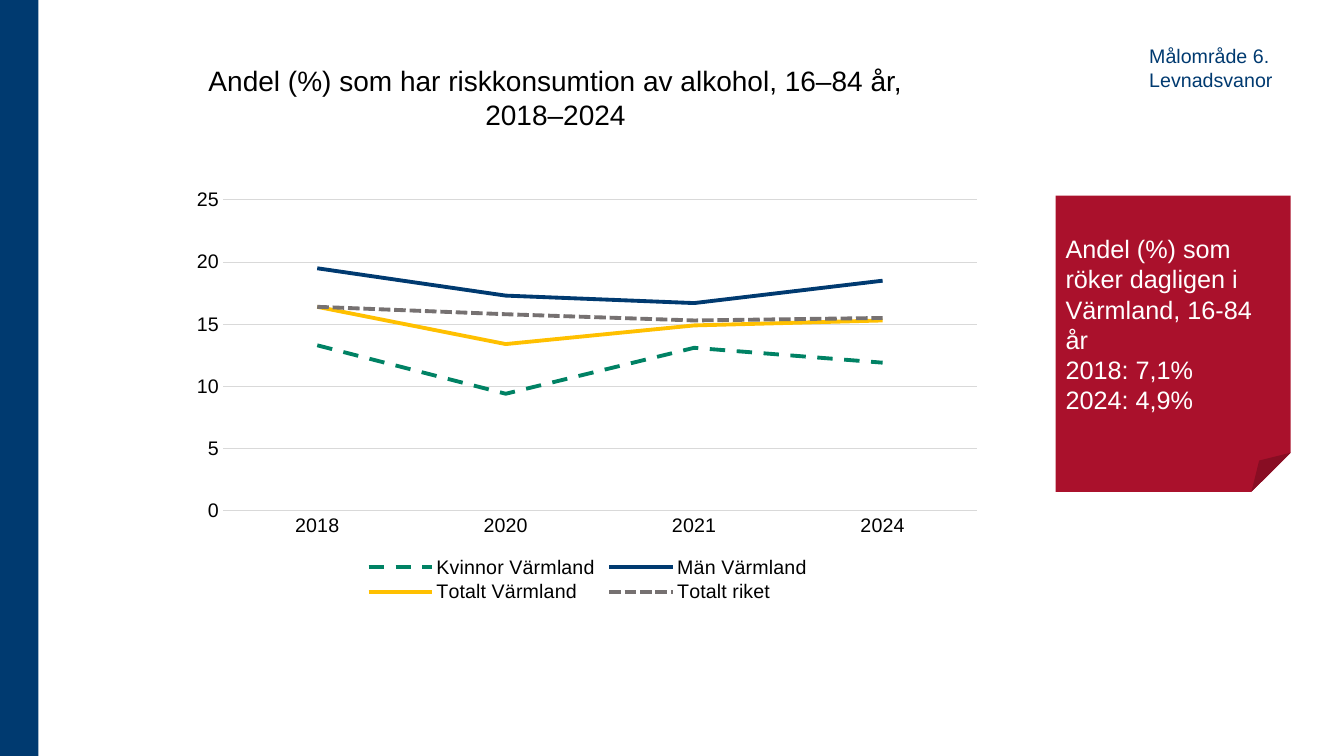
"""Builds a slide on risk consumption of alcohol in Värmland, 2018–2024."""
import pptx
import pptx.chart.data
import pptx.dml.color
import pptx.enum.chart
import pptx.enum.dml
import pptx.enum.shapes
import pptx.enum.text
import pptx.oxml
import pptx.util
from pptx.util import Inches

FONT = "Arial"
COLORS = {
    "navy": "003A70", "green": "008264", "yellow": "FFC000", "gray": "767171",
    "red": "AA112C", "grid": "D9D9D9", "black": "000000", "white": "FFFFFF",
}
DASH = pptx.enum.dml.MSO_LINE.DASH
SQUARE_DASH = pptx.enum.dml.MSO_LINE.SQUARE_DOT
YEARS = ["2018", "2020", "2021", "2024"]
SERIES = [
    ("Kvinnor Värmland", (13.3, 9.4, 13.1, 11.9), "green", DASH),
    ("Män Värmland", (19.5, 17.3, 16.7, 18.5), "navy", None),
    ("Totalt Värmland", (16.4, 13.4, 14.9, 15.3), "yellow", None),
    ("Totalt riket", (16.4, 15.8, 15.3, 15.5), "gray", SQUARE_DASH),
]


def color(name):
    """Return the named colour."""
    return pptx.dml.color.RGBColor.from_string(COLORS[name])


def set_font(font, size, name):
    """Set typeface, size and colour."""
    font.name = FONT
    font.size = pptx.util.Pt(size)
    font.color.rgb = color(name)


def set_line(line, name, width):
    """Set line colour and width."""
    line.color.rgb = color(name)
    line.width = pptx.util.Pt(width)


def write(box, lines, size, name):
    """Write one paragraph per line into a shape, aligned left."""
    frame = box.text_frame
    frame.word_wrap = True
    frame.text = "\n".join(lines)
    for para in frame.paragraphs:
        para.alignment = pptx.enum.text.PP_ALIGN.LEFT
        set_font(para.font, size, name)
    return frame


def add_block(page, kind, place, fill):
    """Add a filled shape without outline or shadow."""
    block = page.shapes.add_shape(kind, *map(Inches, place))
    block.shadow.inherit = False
    block.fill.solid()
    block.fill.fore_color.rgb = color(fill)
    block.line.fill.background()
    return block


def add_title(page, text):
    """Place and format the title."""
    title = page.shapes.title
    title.left, title.top, title.width, title.height = map(Inches, (1.67, 0.57, 7.68, 0.78))
    frame = write(title, [text], 20, "black")
    frame.auto_size = pptx.enum.text.MSO_AUTO_SIZE.NONE
    frame.vertical_anchor = pptx.enum.text.MSO_ANCHOR.BOTTOM
    frame.paragraphs[0].alignment = pptx.enum.text.PP_ALIGN.CENTER


def layout_xml(place, inner=False):
    """Return a manual chart layout in fractions of the chart's size."""
    target = '<c:layoutTarget val="inner"/>' if inner else ""
    modes = "".join(f'<c:{axis}Mode val="edge"/>' for axis in "xy")
    sizes = "".join(f'<c:{key} val="{value}"/>' for key, value in zip("xywh", place))
    return pptx.oxml.parse_xml(
        '<c:layout xmlns:c="http://schemas.openxmlformats.org/drawingml/2006/chart">'
        f"<c:manualLayout>{target}{modes}{sizes}</c:manualLayout></c:layout>")


def place_chart_parts(chart):
    """Fix the positions of the plot area and the legend."""
    plot_area = chart._chartSpace.chart.plotArea
    legend = chart.legend._element
    for part in (plot_area, legend):
        for layout in part.xpath("c:layout"):
            part.remove(layout)
    plot_area.insert(0, layout_xml((0.05, 0.05, 0.93, 0.72), inner=True))
    legend.xpath("c:legendPos")[0].addnext(layout_xml((0.22, 0.87, 0.56, 0.12)))


def format_axes(chart):
    """Format both axes and the gridlines."""
    for axis in (chart.category_axis, chart.value_axis):
        axis.major_tick_mark = pptx.enum.chart.XL_TICK_MARK.NONE
        axis.minor_tick_mark = pptx.enum.chart.XL_TICK_MARK.NONE
        set_font(axis.tick_labels.font, 14, "black")
    set_line(chart.category_axis.format.line, "grid", 0.75)
    values = chart.value_axis
    values.minimum_scale, values.maximum_scale, values.major_unit = 0, 25, 5
    values.format.line.fill.background()
    values.has_major_gridlines = True
    set_line(values.major_gridlines.format.line, "grid", 0.75)


def add_line_chart(page):
    """Add the line chart with its legend."""
    data = pptx.chart.data.CategoryChartData(number_format="General")
    data.categories = YEARS
    for name, values, _, _ in SERIES:
        data.add_series(name, values)
    place = map(Inches, (1.81, 1.77, 8.04, 4.28))
    chart = page.shapes.add_chart(pptx.enum.chart.XL_CHART_TYPE.LINE, *place, data).chart
    set_font(chart.font, 10, "black")
    chart.has_title = False
    chart.plots[0].vary_by_categories = False
    for series, (_, _, name, dash) in zip(chart.plots[0].series, SERIES):
        series.smooth = False
        series.marker.style = pptx.enum.chart.XL_MARKER_STYLE.NONE
        set_line(series.format.line, name, 2.75)
        if dash:
            series.format.line.dash_style = dash
    format_axes(chart)
    chart.has_legend = True
    chart.legend.position = pptx.enum.chart.XL_LEGEND_POSITION.BOTTOM
    chart.legend.include_in_layout = False
    set_font(chart.legend.font, 14, "black")
    place_chart_parts(chart)


def main():
    """Build and save the slide."""
    deck = pptx.Presentation()
    deck.slide_width, deck.slide_height = Inches(13.33), Inches(7.5)
    page = deck.slides.add_slide(deck.slide_layouts.get_by_name("Title Only"))
    shapes = pptx.enum.shapes.MSO_SHAPE
    add_block(page, shapes.RECTANGLE, (0, 0, 0.38, 7.5), "navy")
    add_title(page, "Andel (%) som har riskkonsumtion av alkohol, 16–84 år, 2018–2024")
    add_line_chart(page)
    area = page.shapes.add_textbox(*map(Inches, (11.3, 0.39, 1.66, 0.57)))
    write(area, ["Målområde 6.", "Levnadsvanor"], 14, "navy")
    note = add_block(page, shapes.FOLDED_CORNER, (10.47, 1.94, 2.33, 2.94), "red")
    frame = write(note, ["Andel (%) som röker dagligen i Värmland, 16-84 år",
                         "2018: 7,1%", "2024: 4,9%"], 18, "white")
    frame.vertical_anchor = pptx.enum.text.MSO_ANCHOR.MIDDLE
    deck.save("out.pptx")


if __name__ == "__main__":
    main()
